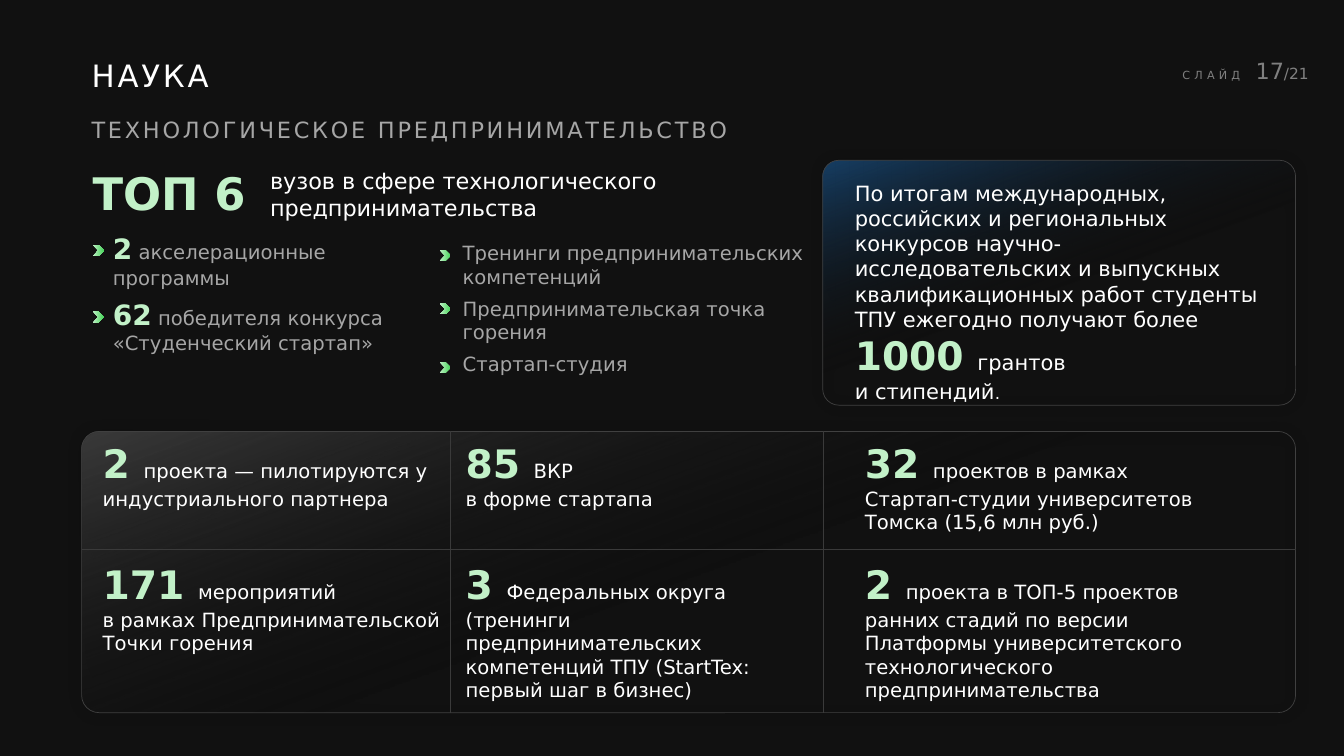
from dataclasses import dataclass

from lxml import etree
from pptx import Presentation
from pptx.dml.color import RGBColor
from pptx.enum import shapes, text
from pptx.oxml import ns
from pptx.util import Inches, Pt

FONT = "DejaVu Sans"
WHITE, SILVER, GRAY, MINT, GREEN = "FFFFFF", "A6A6A6", "808080", "C2F1C8", "47D45A"
DARK, RULE, EDGE = "111111", "3A3A3A", "404040"


@dataclass
class Span:
    wording: str
    size: float
    color: str = WHITE
    bold: bool = False
    tracking: float = 0


@dataclass
class Fact:
    column: int
    row: int
    width: float
    figure: str
    wording: str


@dataclass
class Panel:
    left: float
    top: float
    width: float
    height: float
    rounding: float
    glow: str


def rgb(color: str) -> RGBColor:
    return RGBColor.from_string(color)


def accent(wording: str, size: float) -> Span:
    return Span(wording, size, MINT, True)


def write(paragraph, spans: list[Span]) -> None:
    """Add the spans as runs; a vertical tab is a line break."""
    for span in spans:
        for index, piece in enumerate(span.wording.split("\v")):
            if index:
                paragraph.add_line_break()
            run = paragraph.add_run()
            run.text = piece
            run.font.name = FONT
            run.font.size = Pt(span.size)
            run.font.bold = span.bold
            run.font.color.rgb = rgb(span.color)
            if span.tracking:
                run.font._element.set("spc", str(int(span.tracking * 100)))


def add_text(slide, left: float, top: float, width: float, height: float,
             paragraphs: list[list[Span]], after: float = 0, inset: float = 0.05):
    box = slide.shapes.add_textbox(Inches(left), Inches(top), Inches(width), Inches(height))
    frame = box.text_frame
    frame.word_wrap = True
    frame.margin_top = frame.margin_bottom = Inches(inset)
    for index, spans in enumerate(paragraphs):
        paragraph = frame.add_paragraph() if index else frame.paragraphs[0]
        paragraph.space_after = Pt(after)
        write(paragraph, spans)
    return frame


def fill_gradient(shape, start: str, end: str, end_position: float, angle: float) -> None:
    shape.fill.gradient()
    shape.fill.gradient_angle = angle
    for stop, color, position in zip(shape.fill.gradient_stops, (start, end), (0, end_position)):
        stop.color.rgb = rgb(color)
        stop.position = position


def add_panel(slide, panel: Panel) -> None:
    """Rounded card whose corner glow fades to transparent."""
    card = slide.shapes.add_shape(
        shapes.MSO_SHAPE.ROUNDED_RECTANGLE, Inches(panel.left), Inches(panel.top),
        Inches(panel.width), Inches(panel.height))
    card.adjustments[0] = panel.rounding
    fill_gradient(card, panel.glow, DARK, 0.51, 290)
    last_color = card._element.spPr.findall(".//" + ns.qn("a:srgbClr"))[-1]
    etree.SubElement(last_color, ns.qn("a:alpha"), val="0")
    card.line.color.rgb = rgb(EDGE)
    card.line.width = Pt(0.5)
    card.shadow.inherit = False
    effects = card._element.spPr.find(ns.qn("a:effectLst"))
    shadow = etree.SubElement(effects, ns.qn("a:outerShdw"), blurRad=str(Pt(9)), dist="0", dir="0")
    shade = etree.SubElement(shadow, ns.qn("a:srgbClr"), val="000000")
    etree.SubElement(shade, ns.qn("a:alpha"), val="19000")


def add_chevron(slide, left: float, top: float) -> None:
    chevron = slide.shapes.add_shape(
        shapes.MSO_SHAPE.CHEVRON, Inches(left), Inches(top), Inches(0.11), Inches(0.11))
    fill_gradient(chevron, MINT, GREEN, 1, 0)
    chevron.line.fill.background()
    chevron.shadow.inherit = False


def add_rule(slide, x1: float, y1: float, x2: float, y2: float) -> None:
    rule = slide.shapes.add_connector(
        shapes.MSO_CONNECTOR.STRAIGHT, Inches(x1), Inches(y1), Inches(x2), Inches(y2))
    rule.line.color.rgb = rgb(RULE)
    rule.line.width = Pt(0.5)
    etree.SubElement(rule._element.spPr, ns.qn("a:effectLst"))


def add_heading(slide) -> None:
    title = slide.shapes.title
    title.left, title.top = Inches(0.81), Inches(0.51)
    title.width, title.height = Inches(6.93), Inches(0.47)
    frame = title.text_frame
    frame.auto_size = text.MSO_AUTO_SIZE.NONE
    frame.vertical_anchor = text.MSO_ANCHOR.TOP
    frame.paragraphs[0].alignment = text.PP_ALIGN.LEFT
    write(frame.paragraphs[0], [Span("НАУКА", 22, tracking=2)])
    add_text(slide, 0.81, 1.1, 7.2, 0.37,
             [[Span("ТЕХНОЛОГИЧЕСКОЕ ПРЕДПРИНИМАТЕЛЬСТВО", 16, SILVER, tracking=2)]])
    counter = add_text(slide, 11.45, 0.55, 1.63, 0.29, [[
        Span("СЛАЙД", 8, GRAY, tracking=3), Span(" ", 12, GRAY, tracking=4),
        Span("17", 16, GRAY), Span("/21", 11, GRAY)]])
    counter.vertical_anchor = text.MSO_ANCHOR.MIDDLE
    counter.paragraphs[0].alignment = text.PP_ALIGN.RIGHT


def add_ranking(slide) -> None:
    add_text(slide, 0.82, 1.59, 1.8, 0.64, [[accent("ТОП 6", 32)]])
    add_text(slide, 2.58, 1.61, 5.35, 0.64,
             [[Span("вузов в сфере технологического предпринимательства", 16)]])
    add_text(slide, 1.02, 2.2, 3.12, 1.65, [
        [accent("2", 20), Span(" акселерационные программы", 14, SILVER)],
        [accent("62", 20), Span(" победителя конкурса «Студенческий стартап»", 14, SILVER)],
    ], after=6, inset=0.1)
    activities = ("Тренинги предпринимательских компетенций",
                  "Предпринимательская точка горения", "Стартап-студия")
    add_text(slide, 4.49, 2.29, 3.65, 1.65,
             [[Span(activity, 14, SILVER)] for activity in activities], after=6, inset=0.1)
    for left, tops in ((0.92, (2.43, 3.09)), (4.36, (2.48, 3.01, 3.59))):
        for top in tops:
            add_chevron(slide, left, top)


def add_grants(slide) -> None:
    add_text(slide, 8.38, 1.74, 4.37, 2.31, [[
        Span("По итогам международных, российских и региональных конкурсов "
             "научно-исследовательских и выпускных квалификационных работ студенты "
             "ТПУ ежегодно получают более ", 15),
        accent("1000 ", 28), Span("грантов\vи стипендий", 15), Span(".", 12)]])


def add_facts(slide, grid: Panel) -> None:
    lefts, tops = (0.92, 4.52, 8.48), (4.31, 5.51)
    facts = (
        Fact(0, 0, 3.44, "2", "проекта — пилотируются у индустриального партнера"),
        Fact(1, 0, 3.46, "85", "ВКР\vв форме стартапа"),
        Fact(2, 0, 3.53, "32", "проектов в рамках Стартап-студии университетов Томска (15,6 млн руб.)"),
        Fact(0, 1, 3.55, "171", "мероприятий\vв рамках Предпринимательской Точки горения"),
        Fact(1, 1, 3.6, "3", "Федеральных округа (тренинги предпринимательских компетенций "
                             "ТПУ (StartTex: первый шаг в бизнес)"),
        Fact(2, 1, 4.04, "2", "проекта в ТОП-5 проектов ранних стадий по версии Платформы "
                              "университетского технологического предпринимательства"),
    )
    for fact in facts:
        add_text(slide, lefts[fact.column], tops[fact.row], fact.width, 1.28,
                 [[accent(fact.figure + " ", 28), Span(fact.wording, 14)]])
    add_rule(slide, grid.left, 5.45, grid.left + grid.width, 5.45)
    for x in (4.47, 8.17):
        add_rule(slide, x, grid.top, x, grid.top + grid.height)


def main() -> None:
    deck = Presentation()
    deck.slide_width, deck.slide_height = Inches(13.33), Inches(7.5)
    slide = deck.slides.add_slide(deck.slide_layouts[5])
    slide.background.fill.solid()
    slide.background.fill.fore_color.rgb = rgb(DARK)
    grants_panel = Panel(8.16, 1.59, 4.69, 2.43, 0.066, "163E64")
    facts_panel = Panel(0.81, 4.28, 12.04, 2.79, 0.062, RULE)
    for panel in (grants_panel, facts_panel):
        add_panel(slide, panel)
    add_heading(slide)
    add_ranking(slide)
    add_grants(slide)
    add_facts(slide, facts_panel)
    deck.save("out.pptx")


if __name__ == "__main__":
    main()
